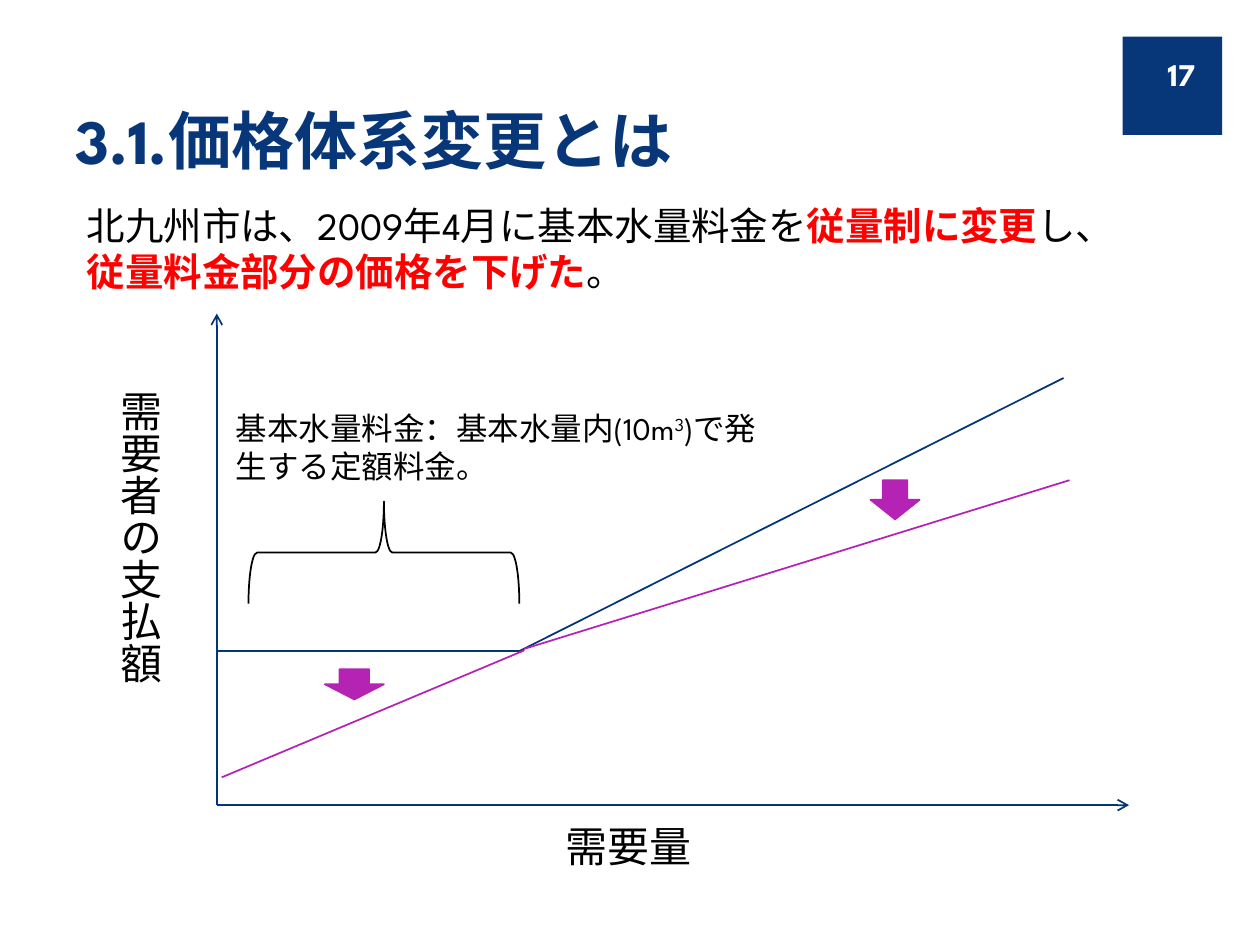
"""Build the slide explaining the change in the water price system."""
import pptx
import pptx.dml.color
import pptx.enum.shapes
import pptx.enum.text
import pptx.oxml
import pptx.oxml.ns
import pptx.util
from pptx.util import Cm

NAVY, AXIS_BLUE, PURPLE = "073779", "043579", "B523B4"
BLACK, RED, WHITE = "000000", "FF0000", "FFFFFF"
SHAPES = pptx.enum.shapes.MSO_SHAPE
ANCHORS = pptx.enum.text.MSO_ANCHOR


def rgb(hex_colour):
    return pptx.dml.color.RGBColor.from_string(hex_colour)


def write(box, size, pieces, wrap=True, anchor=ANCHORS.TOP):
    textbox = slide.shapes.add_textbox(*[Cm(length) for length in box])
    frame = textbox.text_frame
    frame.word_wrap = wrap
    frame.vertical_anchor = anchor
    for wording, colour, bold in pieces:
        run = frame.paragraphs[0].add_run()
        run.text = wording
        run.font.name = "League Spartan"
        run.font.size = pptx.util.Pt(size)
        run.font.bold = bold
        run.font.color.rgb = rgb(colour)
    return frame


presentation = pptx.Presentation()
presentation.slide_width, presentation.slide_height = Cm(25.4), Cm(19.05)
slide = presentation.slides.add_slide(presentation.slide_layouts[6])

preset_shapes = [
    (SHAPES.RECTANGLE, (22.63, 0.74, 2.01, 1.98), NAVY, None, 0),
    (SHAPES.RIGHT_BRACE, (6.71, 8.41, 2.06, 5.46), None, BLACK, 270),
    (SHAPES.DOWN_ARROW, (17.55, 9.68, 0.99, 0.79), PURPLE, PURPLE, 0),
    (SHAPES.DOWN_ARROW, (6.55, 13.49, 1.19, 0.61), PURPLE, PURPLE, 0),
]
for preset, box, fill, outline, rotation in preset_shapes:
    mark = slide.shapes.add_shape(preset, *[Cm(length) for length in box])
    mark.shadow.inherit = False
    mark.rotation = rotation
    if fill:
        mark.fill.solid()
        mark.fill.fore_color.rgb = rgb(fill)
    else:
        mark.fill.background()
    if outline:
        mark.line.color.rgb = rgb(outline)
        mark.line.width = pptx.util.Pt(1)
    else:
        mark.line.fill.background()

origin = (4.37, 16.23)
old_kink = (10.46, 13.13)
graph_lines = [
    (origin, (4.37, 6.32), AXIS_BLUE, True),
    (origin, (22.76, 16.23), AXIS_BLUE, True),
    ((4.37, 13.13), old_kink, AXIS_BLUE, False),
    (old_kink, (21.44, 7.62), AXIS_BLUE, False),
    ((10.57, 13.11), (4.47, 15.67), PURPLE, False),
    ((10.57, 13.08), (21.56, 9.68), PURPLE, False),
]
for start, end, colour, has_arrow in graph_lines:
    segment = slide.shapes.add_connector(
        pptx.enum.shapes.MSO_CONNECTOR.STRAIGHT,
        *[Cm(length) for length in start + end])
    segment.line.color.rgb = rgb(colour)
    segment.line.width = pptx.util.Pt(1)
    if has_arrow:
        head = pptx.oxml.parse_xml(
            f'<a:tailEnd {pptx.oxml.ns.nsdecls("a")} type="arrow"/>')
        segment.line._get_or_add_ln().append(head)
    segment._element.spPr.append(
        pptx.oxml.parse_xml(f'<a:effectLst {pptx.oxml.ns.nsdecls("a")}/>'))

write((1.27, 2.13, 18.08, 1.57), 36, [("3.1.価格体系変更とは", NAVY, True)],
      anchor=ANCHORS.BOTTOM)
page_number = write((22.94, 0.99, 1.4, 1.02), 18, [("17", WHITE, True)],
                    anchor=ANCHORS.MIDDLE)
page_number.paragraphs[0].alignment = pptx.enum.text.PP_ALIGN.RIGHT

payment_label = write((1.91, 7.62, 1.55, 6.17), 24,
                      [("需要者の支払額", BLACK, False)], wrap=False)
payment_label._txBody.bodyPr.set("vert", "eaVert")
write((11.15, 16.41, 3.07, 1.27), 24, [("需要量", BLACK, False)], wrap=False)

base_charge = write((4.5, 8.13, 11.13, 1.8), 18, [
    ("基本水量料金：基本水量内(10m", BLACK, False),
    ("3", BLACK, False),
    (")で発生する定額料金。", BLACK, False),
])
cubic = base_charge.paragraphs[0].runs[1]
cubic._r.get_or_add_rPr().set("baseline", "30000")

write((1.5, 3.94, 21.39, 2.13), 22, [
    ("北九州市は、2009年4月に基本水量料金を", BLACK, False),
    ("従量制に変更", RED, True),
    ("し、", BLACK, False),
    ("従量料金部分の価格を下げた", RED, True),
    ("。", BLACK, False),
])

presentation.save("out.pptx")
